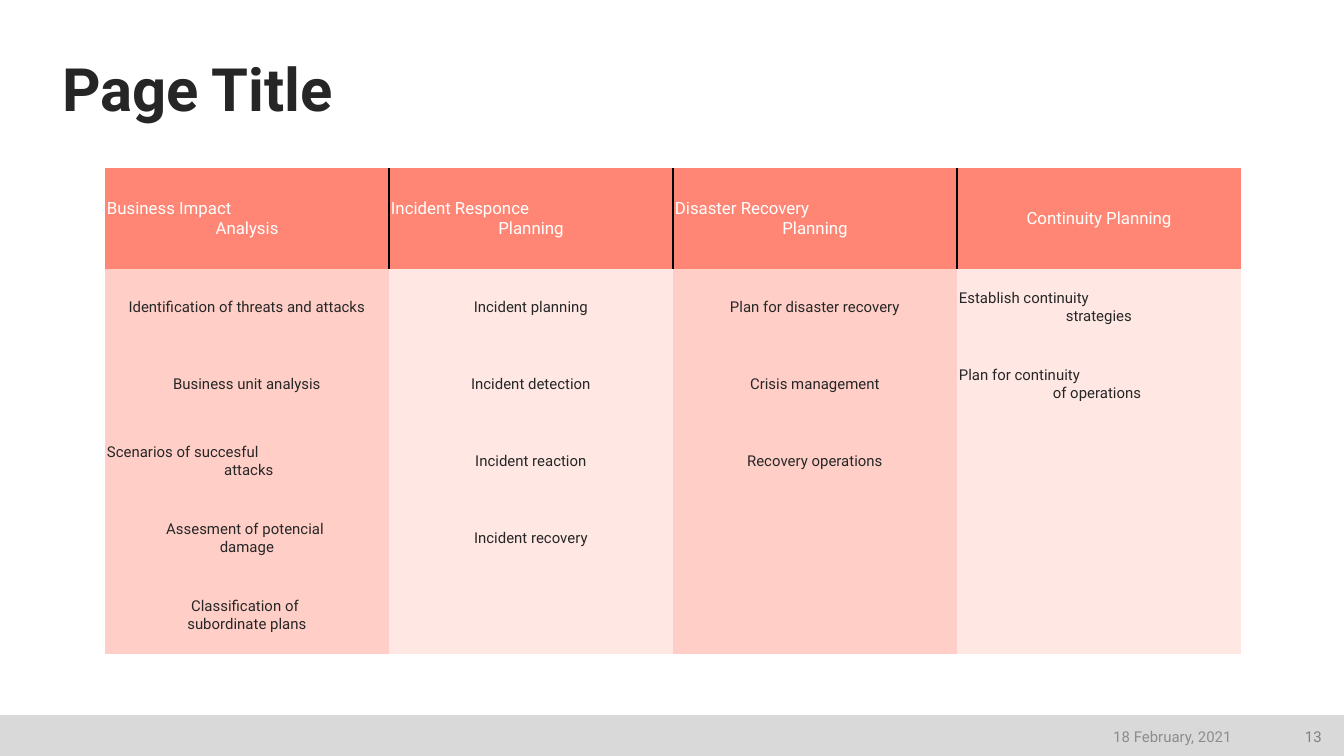
"""Build a page-title slide with a four-column contingency planning table."""
from dataclasses import dataclass

import pptx
import pptx.dml.color
import pptx.enum.shapes
import pptx.enum.text
import pptx.oxml
import pptx.oxml.ns
import pptx.util

PX = 9144000 / 1344
ALIGN = pptx.enum.text.PP_ALIGN
ANCHOR = pptx.enum.text.MSO_ANCHOR


@dataclass(frozen=True)
class Theme:
    font: str = "Roboto"
    title_pt: int = 32
    header_pt: int = 9
    body_pt: int = 8
    ink: str = "262626"
    white: str = "FFFFFF"
    header: str = "FF8674"
    bands: tuple = ("FFCFC7", "FFE7E3")
    divider: str = "000000"
    footer: str = "D9D9D9"
    number: str = "808080"
    date: str = "8C8C8C"


theme = Theme()


def px(*values):
    return [pptx.util.Emu(round(v * PX)) for v in values]


def add_run(p, text, size, color, align, bold=False):
    p.alignment = align
    r = p.add_run()
    r.text = text
    r.font.name = theme.font
    r.font.size = pptx.util.Pt(size)
    r.font.bold = bold
    r.font.color.rgb = pptx.dml.color.RGBColor.from_string(color)


columns = [
    (
        "Business Impact\nAnalysis",
        [
            ["Identification of threats and attacks"],
            ["Business unit analysis"],
            ["Scenarios of succesful\n attacks"],
            ["Assesment of potencial ", "damage"],
            ["Classification of ", "subordinate plans"],
        ],
    ),
    (
        "Incident Responce\nPlanning",
        [["Incident planning"], ["Incident detection"], ["Incident reaction"], ["Incident recovery"]],
    ),
    (
        "Disaster Recovery\nPlanning",
        [["Plan for disaster recovery"], ["Crisis management"], ["Recovery operations"]],
    ),
    (
        "Continuity Planning",
        [["Establish continuity \nstrategies"], ["Plan for continuity \nof operations "]],
    ),
]

prs = pptx.Presentation()
prs.slide_width, prs.slide_height = px(1344, 756)
s = prs.slides.add_slide(prs.slide_layouts[5])

footer = s.shapes.add_shape(pptx.enum.shapes.MSO_SHAPE.RECTANGLE, *px(0, 715, 1344, 41))
footer.shadow.inherit = False
footer.fill.solid()
footer.fill.fore_color.rgb = pptx.dml.color.RGBColor.from_string(theme.footer)
footer.line.fill.background()

title = s.shapes.title
title.left, title.top, title.width, title.height = px(62, 54, 1223, 70)
tf = title.text_frame
tf.margin_left = tf.margin_right = tf.margin_top = tf.margin_bottom = 0
tf.vertical_anchor = ANCHOR.BOTTOM
tf.paragraphs[0].line_spacing = 0.9
add_run(tf.paragraphs[0], "Page Title", theme.title_pt, theme.ink, ALIGN.LEFT, bold=True)

row_heights = [101] + [77] * 5
col_width = 284
frame = s.shapes.add_table(
    len(row_heights), len(columns), *px(105, 168, col_width * len(columns), sum(row_heights))
)
table = frame.table
style = table._tbl.tblPr.find(pptx.oxml.ns.qn("a:tableStyleId"))
style.text = "{2D5ABB26-0587-4C30-8999-92F81FD0307C}"
for row, height in zip(table.rows, row_heights):
    row.height = px(height)[0]

for c, (heading, items) in enumerate(columns):
    table.columns[c].width = px(col_width)[0]
    for i in range(len(row_heights)):
        cell = table.cell(i, c)
        is_header = i == 0
        fill = theme.header if is_header else theme.bands[c % 2]
        size = theme.header_pt if is_header else theme.body_pt
        color = theme.white if is_header else theme.ink
        cell.fill.solid()
        cell.fill.fore_color.rgb = pptx.dml.color.RGBColor.from_string(fill)
        cell.vertical_anchor = ANCHOR.MIDDLE
        cell.margin_left = cell.margin_right = cell.margin_top = cell.margin_bottom = px(2)[0]
        tf = cell.text_frame
        lines = ([[heading]] + items)[i] if i <= len(items) else []
        for n, line in enumerate(lines):
            p = tf.add_paragraph() if n else tf.paragraphs[0]
            add_run(p, line, size, color, ALIGN.CENTER)

    sides = (["lnR"] if c < len(columns) - 1 else []) + (["lnL"] if c else [])
    for side in sides:
        border = pptx.oxml.parse_xml(
            f'<a:{side} {pptx.oxml.ns.nsdecls("a")} w="12700"><a:solidFill>'
            f'<a:srgbClr val="{theme.divider}"/></a:solidFill></a:{side}>'
        )
        table.cell(0, c)._tc.get_or_add_tcPr().insert(0, border)

for text, color, left, width in [
    ("13", theme.number, 1285, 50),
    ("18 February, 2021", theme.date, 943, 302),
]:
    sp = s.shapes.add_textbox(*px(left, 719, width, 35))
    tf = sp.text_frame
    tf.word_wrap = True
    tf.vertical_anchor = ANCHOR.MIDDLE
    add_run(tf.paragraphs[0], text, theme.body_pt, color, ALIGN.RIGHT)

prs.save("out.pptx")
